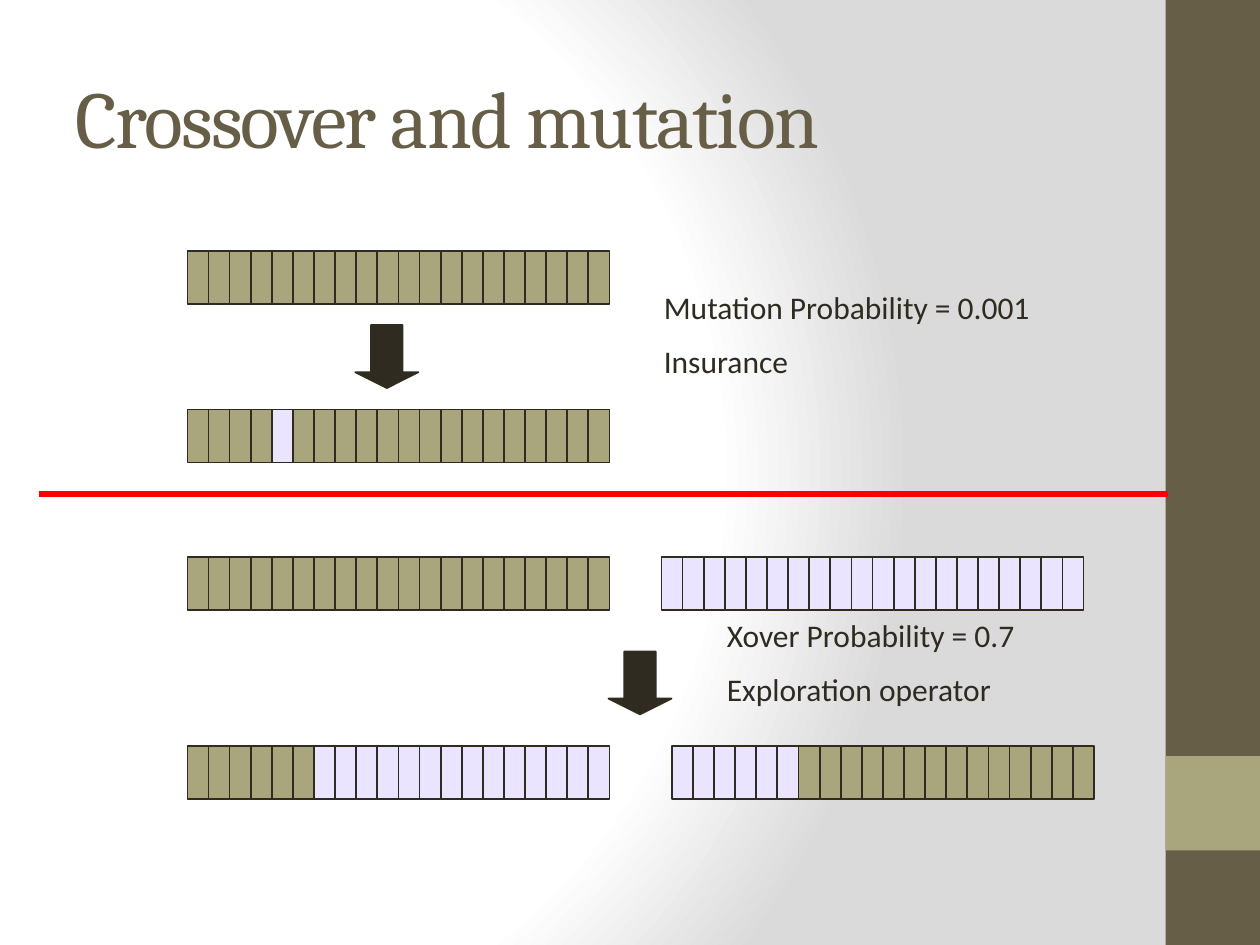
from dataclasses import dataclass

from lxml import etree
from pptx import Presentation
from pptx.dml.color import RGBColor
from pptx.enum import shapes, text
from pptx.oxml import parse_xml
from pptx.oxml.ns import nsdecls, qn
from pptx import util as u

GRID = u.Inches(0.25)  # 40 columns by 30 rows
COLUMNS, ROWS = 40, 30
GENES = 20
STRAND_WIDTH, STRAND_HEIGHT = 13.4, 1.68


@dataclass(frozen=True)
class Theme:
    brown: str = "675E47"
    olive: str = "A9A57C"
    lilac: str = "EBE4FE"
    ink: str = "2F2B20"
    red: str = "FF0000"
    white: str = "FFFFFF"
    grey: str = "DADADA"
    heading_font: str = "Cambria"
    body_font: str = "Calibri"
    heading_size: int = 46
    body_size: int = 18
    outline: int = 1
    divider: int = 3


THEME = Theme()


@dataclass(frozen=True)
class Box:
    column: float
    row: float
    width: float
    height: float

    def inner(self, column, row, width, height):
        """A box placed relative to this one."""
        return Box(self.column + column, self.row + row, width, height)

    def lengths(self):
        values = (self.column, self.row, self.width, self.height)
        return [round(value * GRID) for value in values]


def add_block(slide, kind, box, fill, line=None):
    shape = slide.shapes.add_shape(kind, *box.lengths())
    shape.shadow.inherit = False
    shape.fill.solid()
    shape.fill.fore_color.rgb = RGBColor.from_string(fill)
    if line:
        shape.line.color.rgb = RGBColor.from_string(line)
        shape.line.width = u.Pt(THEME.outline)
    else:
        shape.line.fill.background()
    return shape


def format_font(font, color, **values):
    font.color.rgb = RGBColor.from_string(color)
    for name, value in values.items():
        setattr(font, name, value)


def add_strand(slide, box, colors):
    """A chromosome: one cell for each gene colour."""
    width = box.width / len(colors)
    for index, color in enumerate(colors):
        cell = box.inner(index * width, 0, width, box.height)
        add_block(slide, shapes.MSO_SHAPE.RECTANGLE, cell, color, THEME.ink)


def add_arrow(slide, box):
    arrow = add_block(slide, shapes.MSO_SHAPE.DOWN_ARROW, box, THEME.ink, THEME.ink)
    arrow.adjustments[0], arrow.adjustments[1] = 0.5, 0.25


def add_caption(slide, box, lines):
    frame = slide.shapes.add_textbox(*box.lengths()).text_frame
    frame.word_wrap = True
    frame.text = "\n".join(lines)
    for paragraph in frame.paragraphs:
        paragraph.space_before = u.Pt(THEME.body_size / 2)
        format_font(paragraph.runs[0].font, THEME.ink,
                    name=THEME.body_font, size=u.Pt(THEME.body_size))


def add_background(slide):
    """White glow from the left edge fading to grey."""
    slide.background.fill.gradient()
    gradient = next(slide.element.iter(qn("a:gradFill")))
    for child in list(gradient):
        gradient.remove(child)
    stops = etree.SubElement(gradient, qn("a:gsLst"))
    for position, color in ((0, THEME.white), (75, THEME.white), (100, THEME.grey)):
        stop = etree.SubElement(stops, qn("a:gs"), pos=str(position * 1000))
        etree.SubElement(stop, qn("a:srgbClr"), val=color)
    gradient.append(parse_xml(
        f'<a:path {nsdecls("a")} path="circle">'
        '<a:fillToRect l="20000" t="50000" r="100000" b="50000"/></a:path>'))


def add_sidebar(slide, box):
    add_block(slide, shapes.MSO_SHAPE.RECTANGLE, box, THEME.brown)
    accent = box.inner(0, box.height * 0.8, box.width, box.height * 0.1)
    add_block(slide, shapes.MSO_SHAPE.RECTANGLE, accent, THEME.olive)


def add_title(slide, box, wording):
    title = slide.shapes.title
    title.left, title.top, title.width, title.height = box.lengths()
    frame = title.text_frame
    frame.text = wording
    frame.vertical_anchor = text.MSO_ANCHOR.MIDDLE
    paragraph = frame.paragraphs[0]
    paragraph.alignment = text.PP_ALIGN.LEFT
    format_font(paragraph.runs[0].font, THEME.brown,
                name=THEME.heading_font, size=u.Pt(THEME.heading_size))
    next(title.element.iter(qn("a:rPr"))).set("spc", "-100")


def add_mutation(slide, box):
    parent = [THEME.olive] * GENES
    mutant = parent.copy()
    mutant[4] = THEME.lilac
    for row, colors in ((0, parent), (5.04, mutant)):
        add_strand(slide, box.inner(0, row, STRAND_WIDTH, STRAND_HEIGHT), colors)
    add_arrow(slide, box.inner(5.33, 2.36, 2, 2))
    add_caption(slide, box.inner(14.73, 1, 16.72, 3.44),
                ["Mutation Probability = 0.001", "Insurance"])


def add_crossover(slide, box):
    first, second = [THEME.olive] * GENES, [THEME.lilac] * GENES
    cut = 6
    strands = (
        (0, 0, first),
        (15.05, 0, second),
        (0, 6, first[:cut] + second[cut:]),
        (15.38, 6, second[:cut] + first[cut:]),
    )
    for column, row, colors in strands:
        add_strand(slide, box.inner(column, row, STRAND_WIDTH, STRAND_HEIGHT), colors)
    add_arrow(slide, box.inner(13.37, 3, 2, 2))
    add_caption(slide, box.inner(16.73, 1.68, 16.72, 3.44),
                ["Xover Probability = 0.7", "Exploration operator"])


def add_divider(slide, box):
    left, top, width, height = box.lengths()
    line = slide.shapes.add_connector(
        shapes.MSO_CONNECTOR.STRAIGHT, left, top, left + width, top + height)
    line.line.color.rgb = RGBColor.from_string(THEME.red)
    line.line.width = u.Pt(THEME.divider)
    etree.SubElement(line.element.spPr, qn("a:effectLst"))


def main():
    presentation = Presentation()
    presentation.slide_width = COLUMNS * GRID
    presentation.slide_height = ROWS * GRID
    slide = presentation.slides.add_slide(presentation.slide_layouts[5])
    add_background(slide)
    add_sidebar(slide, Box(37, 0, 3, ROWS))
    add_title(slide, Box(2, 1.2, 33.32, 5), "Crossover and mutation")
    add_mutation(slide, Box(5.95, 7.96, 31, 6.72))
    add_crossover(slide, Box(5.95, 17.68, 31, 7.68))
    add_divider(slide, Box(1.24, 15.68, 35.84, 0))
    presentation.save("out.pptx")


if __name__ == "__main__":
    main()
